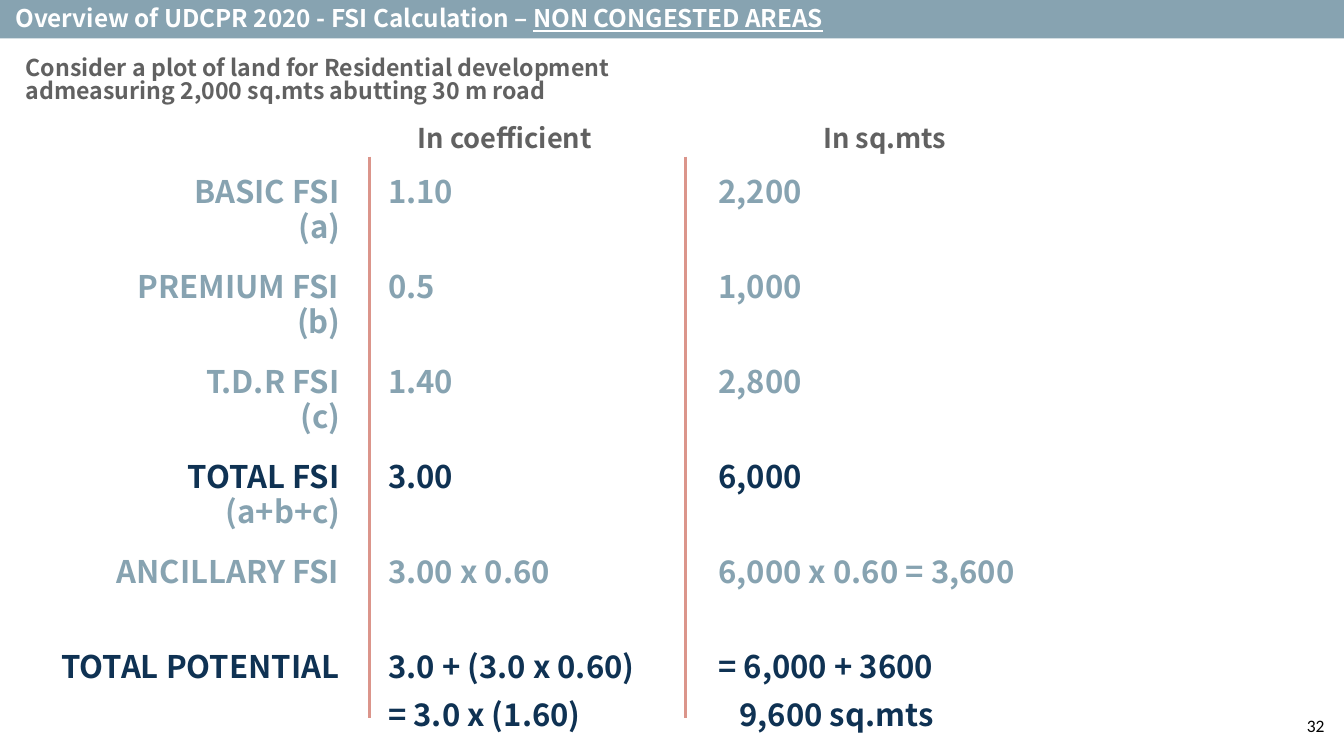
from lxml.etree import SubElement
from pptx import Presentation
from pptx.dml.color import RGBColor
from pptx.enum.shapes import MSO_CONNECTOR, MSO_SHAPE
from pptx.enum.text import MSO_ANCHOR, MSO_AUTO_SIZE, PP_ALIGN
from pptx.oxml.ns import qn
from pptx.util import Inches, Pt

WIDTH, HEIGHT = 19.21, 10.79
STEEL, NAVY, GREY, CORAL = "87A3B1", "0F3253", "616161", "DB958B"
WHITE, BLACK = "FFFFFF", "000000"
ROW_GAP, LINE_GAP = 63.25, 14.4  # points before a new row, and before a second line
ROW_COLOURS = [STEEL, STEEL, STEEL, NAVY, STEEL, NAVY]


def colour(value):
    return RGBColor.from_string(value)


def across(share):
    return Inches(WIDTH * share / 100)


def down(share):
    return Inches(HEIGHT * share / 100)


class SlideBuilder:
    """Draws on one page; every place is given in percent of the slide's size."""

    font = "Noto Sans CJK KR"

    def __init__(self, page):
        self.page = page

    def bar(self, left, top, width, height, fill):
        shape = self.page.shapes.add_shape(
            MSO_SHAPE.RECTANGLE, across(left), down(top), across(width), down(height))
        shape.shadow.inherit = False
        shape.fill.solid()
        shape.fill.fore_color.rgb = colour(fill)
        shape.line.fill.background()

    def divider(self, left, top, bottom):
        line = self.page.shapes.add_connector(
            MSO_CONNECTOR.STRAIGHT, across(left), down(top), across(left), down(bottom))
        line.line.color.rgb = colour(CORAL)
        line.line.width = Pt(3)
        SubElement(line.element.spPr, qn("a:effectLst"))

    def prepare(self, shape, anchor):
        frame = shape.text_frame
        settings = {"word_wrap": True, "auto_size": MSO_AUTO_SIZE.NONE, "vertical_anchor": anchor}
        for name, value in settings.items():
            setattr(frame, name, value)
        return frame

    def text_box(self, left, top, width, height, anchor=MSO_ANCHOR.TOP):
        shape = self.page.shapes.add_textbox(
            across(left), down(top), across(width), down(height))
        return self.prepare(shape, anchor)

    def span(self, para, text, size, fill, **changes):
        run = para.add_run()
        run.text = text
        settings = {"name": self.font, "size": Pt(size), "bold": True, **changes}
        for name, value in settings.items():
            setattr(run.font, name, value)
        run.font.color.rgb = colour(fill)

    def para(self, frame, align=PP_ALIGN.LEFT, spacing=0.9, gap=0):
        """Return the frame's first paragraph while it is empty, else a new one."""
        first = frame.paragraphs[0]
        para = first if not first.runs else frame.add_paragraph()
        settings = {"alignment": align, "line_spacing": spacing, "space_before": Pt(gap)}
        for name, value in settings.items():
            setattr(para, name, value)
        return para

    def title(self, left, top, width, height, plain, underlined):
        shape = self.page.shapes.title
        places = {"left": across(left), "top": down(top),
                  "width": across(width), "height": down(height)}
        for name, value in places.items():
            setattr(shape, name, value)
        para = self.para(self.prepare(shape, MSO_ANCHOR.TOP))
        self.span(para, plain, 25, WHITE)
        self.span(para, underlined, 25, WHITE, underline=True)
        shape.element.getparent().append(shape.element)  # in front of the bar

    def caption(self, left, top, width, text, size, align, spacing):
        frame = self.text_box(left, top, width, 8.8, MSO_ANCHOR.MIDDLE)
        self.span(self.para(frame, align, spacing), text, size, GREY)

    def column(self, left, top, width, height, texts, colours, align=PP_ALIGN.LEFT):
        frame = self.text_box(left, top, width, height)
        for index, (text, fill) in enumerate(zip(texts, colours)):
            para = self.para(frame, align, gap=ROW_GAP if index else 0)
            self.span(para, text, 32, fill)
        return frame

    def second_line(self, frame, text, indent):
        para = self.para(frame, gap=LINE_GAP)
        para._p.get_or_add_pPr().set("marL", str(Inches(indent)))
        self.span(para, text, 32, NAVY)


def main():
    deck = Presentation()
    deck.slide_width, deck.slide_height = Inches(WIDTH), Inches(HEIGHT)
    builder = SlideBuilder(deck.slides.add_slide(deck.slide_layouts[5]))

    builder.bar(0, 0, 100, 5.1, STEEL)
    builder.title(0.62, 0.37, 99.38, 6.58,
                  "Overview of UDCPR 2020 - FSI Calculation – ", "NON CONGESTED AREAS")
    builder.caption(1.41, 6.39, 45.6,
                    "Consider a plot of land for Residential development "
                    "admeasuring 2,000 sq.mts abutting 30 m road",
                    23.8, PP_ALIGN.LEFT, 0.8)

    labels = ["BASIC FSI", "PREMIUM FSI", "T.D.R FSI",
              "TOTAL FSI", "ANCILLARY FSI", "TOTAL POTENTIAL"]
    builder.column(0, 22.89, 25.77, 69.6, labels, ROW_COLOURS, PP_ALIGN.RIGHT)
    builder.column(15.36, 27.53, 10.51, 60, ["(a)", "(b)", "(c)", "(a+b+c)"],
                   [STEEL] * 4, PP_ALIGN.RIGHT)

    value_columns = [
        ("In coefficient", 21.08, 27.49, 28.37,
         ["1.10", "0.5", "1.40", "3.00", "3.00 x 0.60", "3.0 + (3.0 x 0.60)"],
         "= 3.0 x (1.60)", 0),
        ("In sq.mts", 49.35, 51.02, 52.94,
         ["2,200", "1,000", "2,800", "6,000", "6,000 x 0.60 = 3,600", "= 6,000 + 3600"],
         "9,600 sq.mts", 0.3),
    ]
    for heading, heading_left, line_left, left, values, result, indent in value_columns:
        builder.caption(heading_left, 14.09, 32.95, heading, 28, PP_ALIGN.CENTER, 0.9)
        builder.divider(line_left, 20.76, 95.09)
        frame = builder.column(left, 22.89, 26.55, 76.9, values, ROW_COLOURS)
        builder.second_line(frame, result, indent)

    number = builder.para(builder.text_box(88.76, 94.25, 10.31, 5.65), PP_ALIGN.RIGHT, 1.0)
    builder.span(number, "32", 18, BLACK, name="Calibri", bold=False)
    deck.save("out.pptx")


if __name__ == "__main__":
    main()
